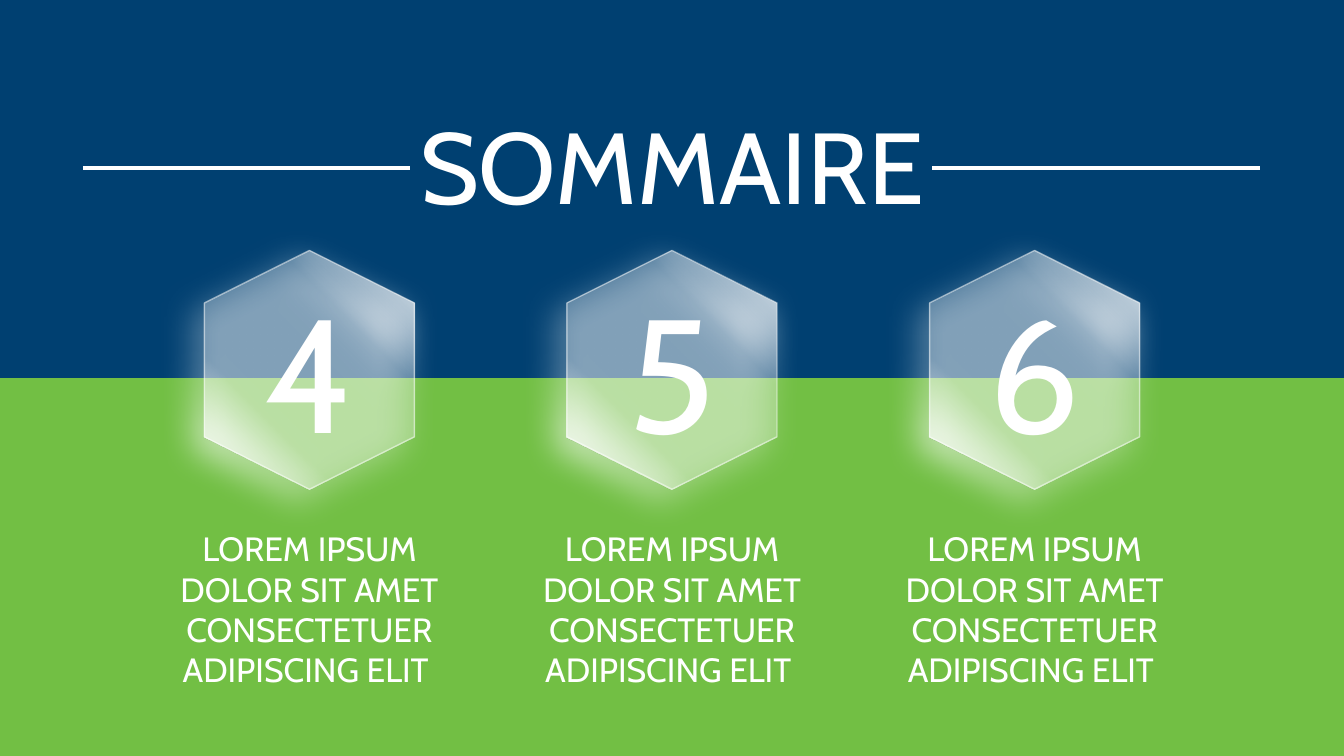
"""Build the summary slide with three numbered glass hexagons."""
from lxml import etree
from pptx import Presentation
from pptx.dml.color import RGBColor
from pptx.enum.shapes import MSO_CONNECTOR, MSO_SHAPE
from pptx.enum.text import MSO_AUTO_SIZE, PP_ALIGN
from pptx.oxml.ns import qn
from pptx.util import Pt

RECTANGLE = MSO_SHAPE.RECTANGLE
HEXAGON = MSO_SHAPE.HEXAGON
STRAIGHT = MSO_CONNECTOR.STRAIGHT
CENTER = PP_ALIGN.CENTER
GROW = MSO_AUTO_SIZE.SHAPE_TO_FIT_TEXT

WIDTH, HEIGHT = 960, 540
BLUE, GREEN, WHITE = "004071", "72BF44", "FFFFFF"
GLASS_STOPS = ((0, 100), (30, 30), (70, 30), (100, 100))
COLUMN_PITCH = 259
BODY = "LOREM IPSUM\nDOLOR SIT AMET CONSECTETUER ADIPISCING ELIT "


def rgb(value):
    return RGBColor.from_string(value)


def add_color(parent, value, opacity):
    color = etree.SubElement(parent, qn("a:srgbClr"), val=value)
    etree.SubElement(color, qn("a:alpha"), val=str(opacity * 1000))


class Deck:
    def __init__(self, slide, font):
        self.slide = slide
        self.font = font
        self.layer = slide.shapes

    def start_group(self):
        self.layer = self.slide.shapes.add_group_shape().shapes

    def end_group(self):
        self.layer = self.slide.shapes

    def band(self, top, height, color):
        band = self.layer.add_shape(RECTANGLE, 0, Pt(top), Pt(WIDTH), Pt(height))
        band.shadow.inherit = False
        band.fill.solid()
        band.fill.fore_color.rgb = rgb(color)
        band.line.fill.background()

    def text(self, content, center, top, width, height, *, size, color=WHITE):
        box = self.layer.add_textbox(
            Pt(center - width / 2), Pt(top), Pt(width), Pt(height))
        frame = box.text_frame
        frame.word_wrap = True
        frame.auto_size = GROW
        paragraph = frame.paragraphs[0]
        paragraph.text = content
        paragraph.alignment = CENTER
        for run in paragraph.runs:
            run.font.name = self.font
            run.font.size = Pt(size)
            run.font.color.rgb = rgb(color)

    def rule(self, start, end, y):
        rule = self.layer.add_connector(STRAIGHT, Pt(start), Pt(y), Pt(end), Pt(y))
        rule.line.color.rgb = rgb(WHITE)
        rule.line.width = Pt(3)
        etree.SubElement(rule._element.spPr, qn("a:effectLst"))

    def glass_hexagon(self, center, top, width, height):
        glass = self.layer.add_shape(
            HEXAGON, Pt(center - width / 2), Pt(top), Pt(width), Pt(height))
        glass.rotation = 90
        glass.fill.gradient()
        glass.fill.gradient_angle = 315
        properties = glass._element.spPr
        stops = properties.find(".//" + qn("a:gsLst"))
        stops.clear()
        for position, opacity in GLASS_STOPS:
            stop = etree.SubElement(stops, qn("a:gs"), pos=str(position * 1000))
            add_color(stop, WHITE, opacity)
        glass.line.width = Pt(1)
        glass.line.color.rgb = rgb(WHITE)
        edge = properties.find(qn("a:ln")).find(".//" + qn("a:srgbClr"))
        etree.SubElement(edge, qn("a:alpha"), val="50000")
        glass.shadow.inherit = False
        glow = etree.SubElement(
            properties.find(qn("a:effectLst")), qn("a:outerShdw"),
            blurRad=str(Pt(24)), dist=str(Pt(11)), dir=str(135 * 60000),
            algn="ctr", rotWithShape="0")
        add_color(glow, WHITE, 100)


def main():
    presentation = Presentation()
    presentation.slide_width, presentation.slide_height = Pt(WIDTH), Pt(HEIGHT)
    slide = presentation.slides.add_slide(presentation.slide_layouts[6])
    deck = Deck(slide, "Cabin")
    deck.band(0, 330, BLUE)
    deck.band(HEIGHT / 2, HEIGHT / 2, GREEN)

    for column, number in enumerate("456", start=-1):
        center = WIDTH / 2 + column * COLUMN_PITCH
        deck.start_group()
        deck.text(BODY, center, 373.7, 222.5, 124, size=24)
        deck.glass_hexagon(center, 189.2, 170.6, 150)
        deck.text(number, center, 190.8, 170, 147, size=115)
        deck.end_group()

    for start in (59.2, 665.8):
        deck.rule(start, start + 234, 119.8)
    deck.text("SOMMAIRE", WIDTH / 2, 70.6, WIDTH, 94.5, size=72)
    presentation.save("out.pptx")


if __name__ == "__main__":
    main()
